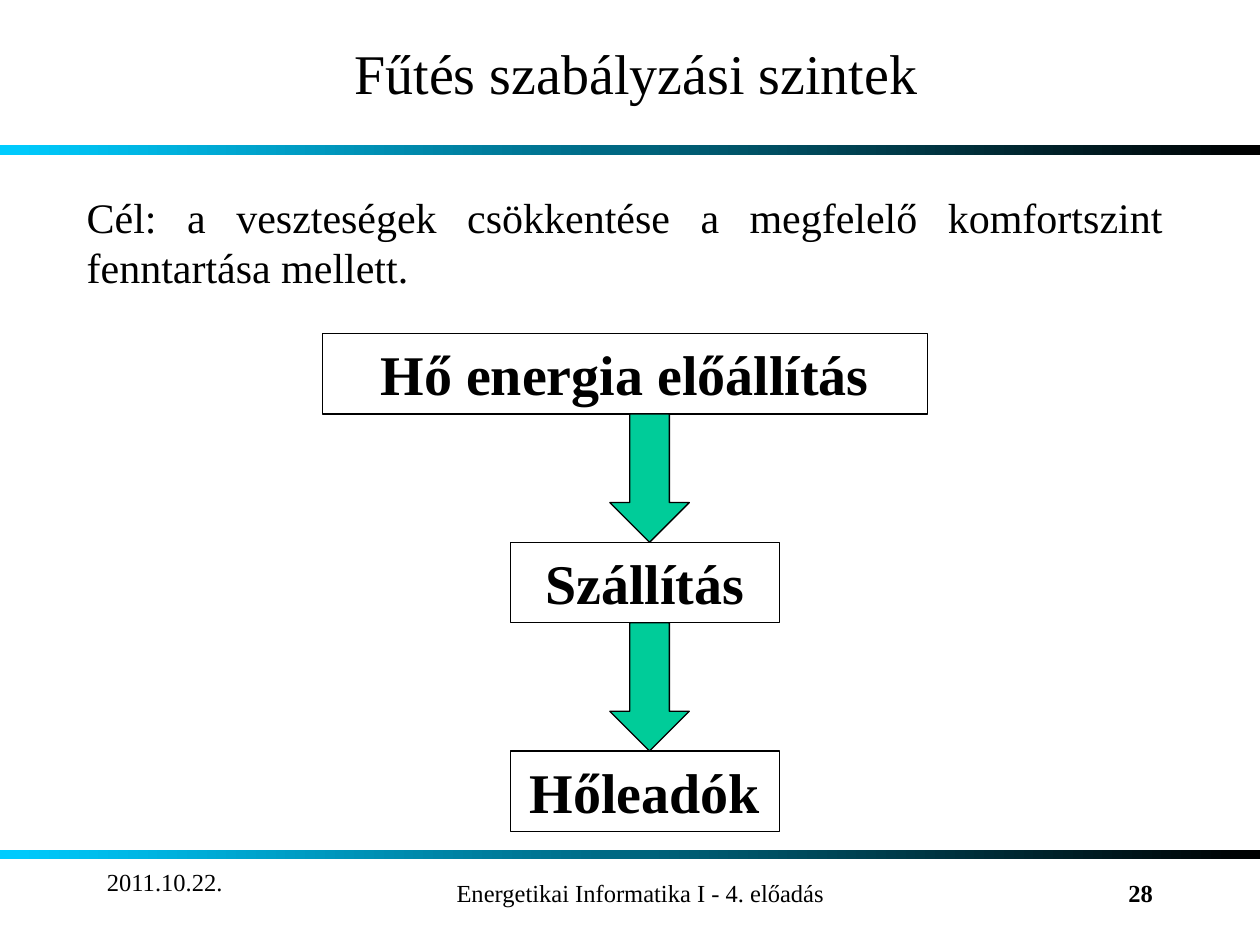
from dataclasses import dataclass

from pptx import Presentation, util as u
from pptx.dml.color import RGBColor
from pptx.enum import shapes, text

Pt = u.Pt
SHAPE = shapes.MSO_SHAPE
ALIGN = text.PP_ALIGN
ANCHOR = text.MSO_ANCHOR


@dataclass(frozen=True)
class Theme:
    ink: str = "000000"
    bar_start: str = "00CCFF"
    arrow: str = "00CC99"
    serif: str = "Times New Roman"
    heading: int = 32
    body: int = 24
    footer: int = 14
    line: float = 0.75


THEME = Theme()
PAGE_WIDTH, PAGE_HEIGHT = 720, 540


def write(shape, wording, size, align=ALIGN.LEFT, anchor=ANCHOR.TOP, bold=False):
    """Put one formatted paragraph into a shape."""
    frame = shape.text_frame
    frame_format = {
        "word_wrap": True, "auto_size": text.MSO_AUTO_SIZE.NONE,
        "vertical_anchor": anchor,
        "margin_left": Pt(7.2), "margin_right": Pt(7.2),
        "margin_top": Pt(3.6), "margin_bottom": Pt(3.6),
    }
    for name, value in frame_format.items():
        setattr(frame, name, value)
    para = frame.paragraphs[0]
    para.alignment = align
    span = para.add_run()
    span.text = wording
    font_format = {"name": THEME.serif, "size": Pt(size), "bold": bold}
    for name, value in font_format.items():
        setattr(span.font, name, value)
    span.font.color.rgb = RGBColor.from_string(THEME.ink)


def add_text(page, box, wording, size, **options):
    write(page.shapes.add_textbox(*map(Pt, box)), wording, size, **options)


def add_outlined(page, kind, box, fill=None):
    shape = page.shapes.add_shape(kind, *map(Pt, box))
    shape.shadow.inherit = False
    if fill:
        shape.fill.solid()
        shape.fill.fore_color.rgb = RGBColor.from_string(fill)
    else:
        shape.fill.background()
    shape.line.color.rgb = RGBColor.from_string(THEME.ink)
    shape.line.width = Pt(THEME.line)
    return shape


def add_bar(page, box):
    """Gradient rule across the page."""
    bar = page.shapes.add_shape(SHAPE.RECTANGLE, *map(Pt, box))
    bar.shadow.inherit = False
    bar.line.fill.background()
    bar.fill.gradient()
    bar.fill.gradient_angle = 0
    ends = ((0, THEME.bar_start), (1, THEME.ink))
    for stop, (position, color) in zip(bar.fill.gradient_stops, ends):
        stop.position = position
        stop.color.rgb = RGBColor.from_string(color)


def add_header(page, box):
    left, top, width, height = box
    add_bar(page, (left, top + height - 5.5, width, 5.5))
    title = page.shapes.title
    place = {"left": left + 93.6, "top": top + 20.2, "width": 540, "height": 41.8}
    for name, value in place.items():
        setattr(title, name, Pt(value))
    write(title, "Fűtés szabályzási szintek", THEME.heading,
          align=ALIGN.CENTER, anchor=ANCHOR.MIDDLE)


def add_flow(page, box, steps):
    """Boxes stacked at equal steps, with a down arrow in each gap."""
    left, top, width, height = box
    box_height, arrow_width = 46, 45.4
    pitch = (height - box_height) / (len(steps) - 1)
    arrow_left = left + 164.2
    for index, (wording, inset, box_width) in enumerate(steps):
        step_top = top + index * pitch
        step = add_outlined(page, SHAPE.RECTANGLE,
                            (left + inset, step_top, box_width, box_height))
        write(step, wording, THEME.heading, align=ALIGN.CENTER, bold=True)
    for index in range(len(steps) - 1):
        arrow_top = top + index * pitch + box_height
        add_outlined(page, SHAPE.DOWN_ARROW,
                     (arrow_left, arrow_top, arrow_width, pitch - box_height),
                     THEME.arrow)


def add_footer(page, box):
    left, top, width, height = box
    add_bar(page, (left, top, width, 5.5))
    add_text(page, (left + 54, top + 6.5, 150, 36), "2011.10.22.", THEME.footer)
    add_text(page, (left + 150, top + 12.7, 432, 30),
             "Energetikai Informatika I - 4. előadás", THEME.footer, align=ALIGN.CENTER)
    add_text(page, (left + 516, top + 12.7, 150, 30), "28", THEME.footer,
             align=ALIGN.RIGHT, bold=True)


def main():
    deck = Presentation()
    deck.slide_width, deck.slide_height = Pt(PAGE_WIDTH), Pt(PAGE_HEIGHT)
    page = deck.slides.add_slide(deck.slide_layouts[5])

    # Title and rule
    add_header(page, (0, 0, PAGE_WIDTH, 88.5))
    # Goal
    add_text(page, (42.5, 105.8, 629.3, 65.5),
             "Cél: a veszteségek csökkentése a megfelelő komfortszint fenntartása mellett.",
             THEME.body, align=ALIGN.JUSTIFY)
    # Control levels: wording, inset from the left, width
    add_flow(page, (184.3, 190.6, 345.6, 284.6), (
        ("Hő energia előállítás", 0, 345.6),
        ("Szállítás", 107.6, 153.4),
        ("Hőleadók", 107.6, 153.4),
    ))
    # Rule, date, lecture and page number
    add_footer(page, (0, 485.5, PAGE_WIDTH, 54.5))

    deck.save("out.pptx")


if __name__ == "__main__":
    main()
